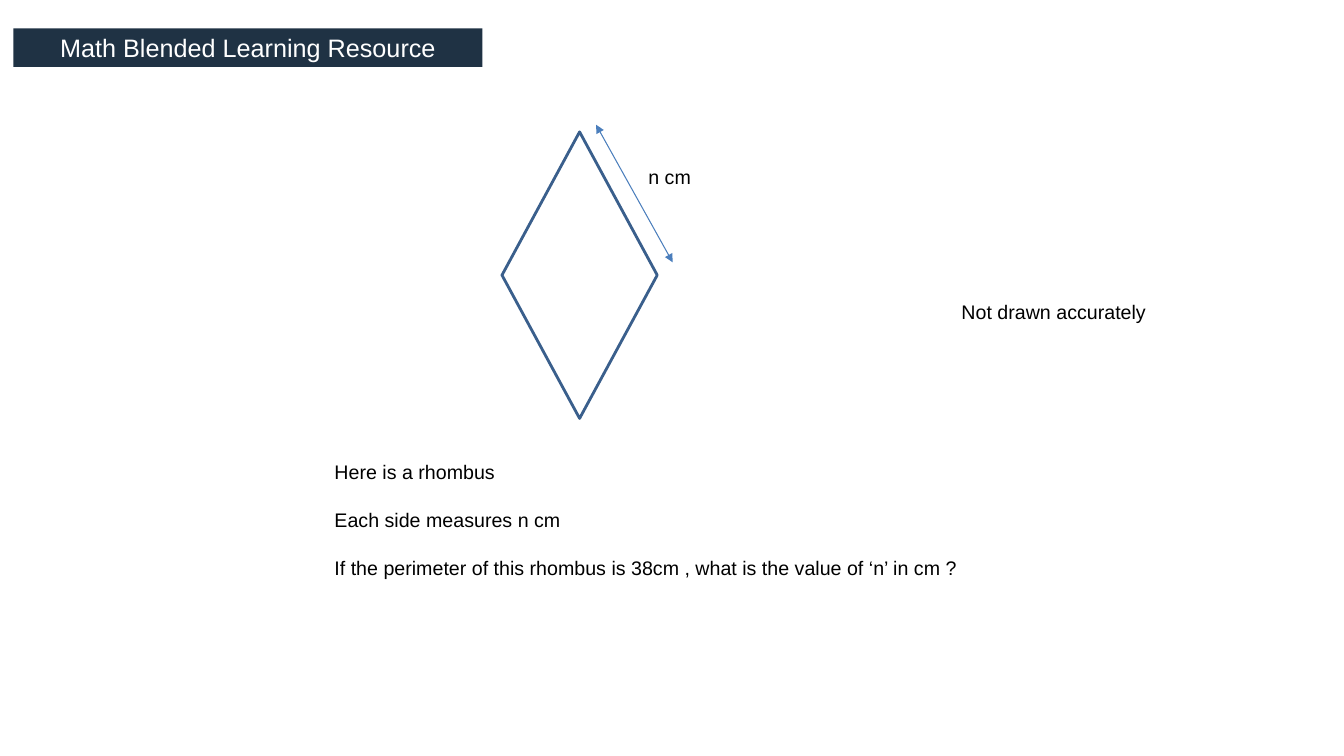
from lxml import etree
from pptx import Presentation, util as u
from pptx.dml.color import RGBColor
from pptx.enum import shapes, text
from pptx.oxml.ns import qn

NAVY = RGBColor(0x1F, 0x32, 0x44)
WHITE = RGBColor(0xFF, 0xFF, 0xFF)
BLACK = RGBColor(0, 0, 0)
OUTLINE_BLUE = RGBColor(0x3A, 0x5F, 0x8C)
ARROW_BLUE = RGBColor(0x4B, 0x7E, 0xBC)

deck = Presentation()
deck.slide_width, deck.slide_height = u.Inches(13.33), u.Inches(7.5)
slide = deck.slides.add_slide(deck.slide_layouts[6])

# Grid of 100 columns by 100 rows
COL, ROW = deck.slide_width / 100, deck.slide_height / 100


def cells(*numbers):
    """Turn alternating columns and rows into slide lengths."""
    return [round(n * (ROW if i % 2 else COL)) for i, n in enumerate(numbers)]


def write(frame, lines, size, colour, align=text.PP_ALIGN.LEFT, gap=0):
    frame.vertical_anchor = text.MSO_ANCHOR.MIDDLE
    for i, line in enumerate(lines):
        paragraph = frame.add_paragraph() if i else frame.paragraphs[0]
        paragraph.alignment = align
        if i:
            paragraph.space_before = u.Pt(gap)
        run = paragraph.add_run()
        run.text = line
        run.font.name = "Arial"
        run.font.size = u.Pt(size)
        run.font.color.rgb = colour


# Title banner
banner = slide.shapes.add_shape(shapes.MSO_SHAPE.RECTANGLE, *cells(1, 3.75, 34.9, 5.1))
banner.shadow.inherit = False
banner.fill.solid()
banner.fill.fore_color.rgb = NAVY
banner.line.fill.background()
banner.text_frame.margin_top = banner.text_frame.margin_bottom = 0
write(banner.text_frame, ["Math Blended Learning Resource"], 18, WHITE,
      text.PP_ALIGN.CENTER)

# Rhombus
rhombus = slide.shapes.add_shape(shapes.MSO_SHAPE.DIAMOND, *cells(37.35, 17.45, 11.55, 37.9))
rhombus.shadow.inherit = False
rhombus.fill.solid()
rhombus.fill.fore_color.rgb = WHITE
rhombus.line.color.rgb = OUTLINE_BLUE
rhombus.line.width = u.Pt(2)

# Double-headed arrow along one side
side_arrow = slide.shapes.add_connector(
    shapes.MSO_CONNECTOR.STRAIGHT, *cells(50.05, 34.7, 44.35, 16.5))
side_arrow.line.color.rgb = ARROW_BLUE
side_arrow.line.width = u.Pt(0.75)
for end in ("a:headEnd", "a:tailEnd"):
    etree.SubElement(side_arrow.line._get_or_add_ln(), qn(end), type="triangle")
etree.SubElement(side_arrow._element.spPr, qn("a:effectLst"))

# Side label, accuracy note and question
QUESTION = ["Here is a rhombus",
            "Each side measures n cm",
            "If the perimeter of this rhombus is 38cm , what is the value of ‘n’ in cm ?"]
for place, lines, wraps in [
    ((47.5, 21.1, 7.8, 4.5), ["n cm"], True),
    ((70.8, 38.95, 15.3, 4.5), ["Not drawn accurately"], False),
    ((24.15, 57.05, 48.1, 23.3), QUESTION, False),
]:
    caption = slide.shapes.add_textbox(*cells(*place))
    caption.text_frame.word_wrap = wraps
    write(caption.text_frame, lines, 14, BLACK, gap=17.5)

deck.save("out.pptx")
